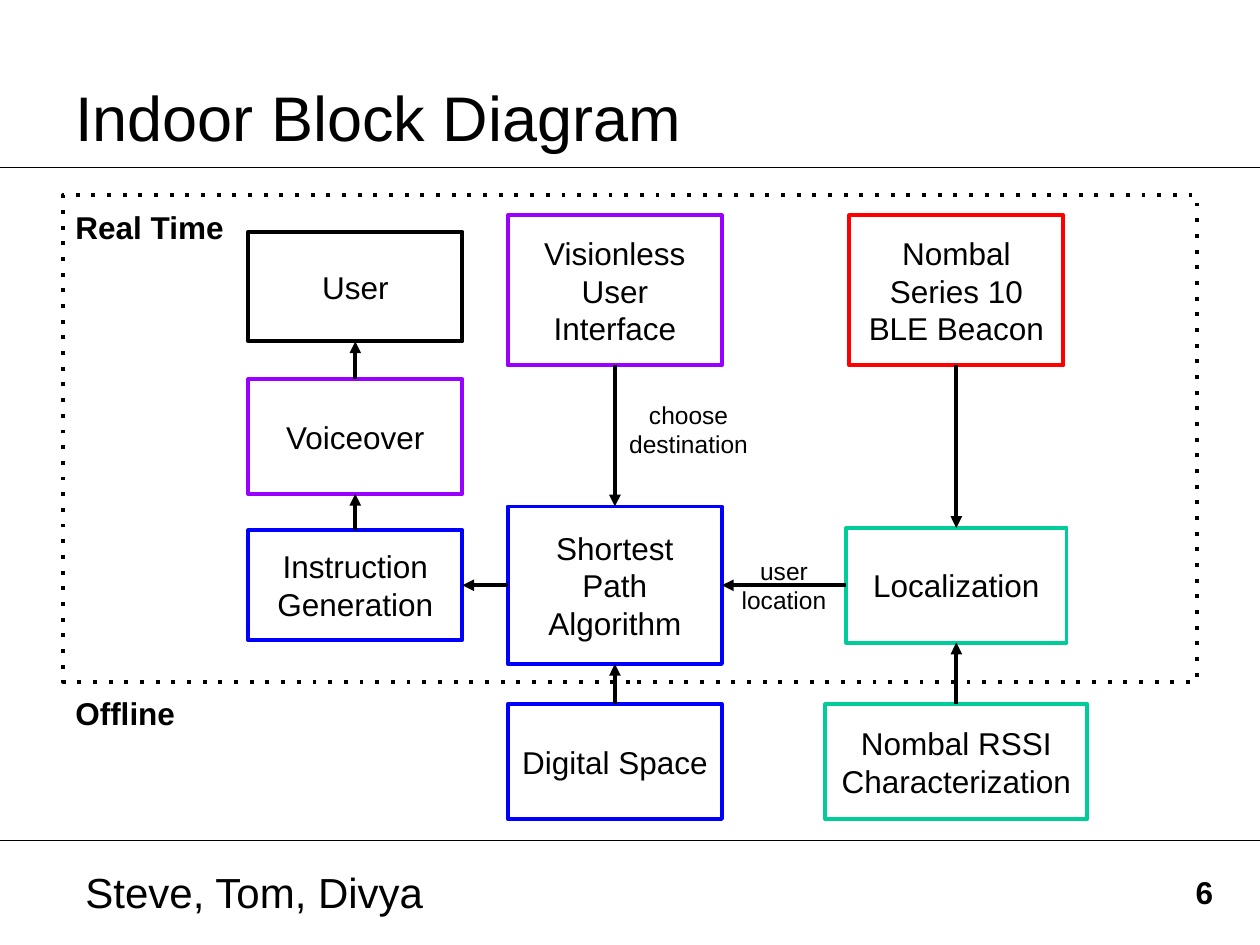
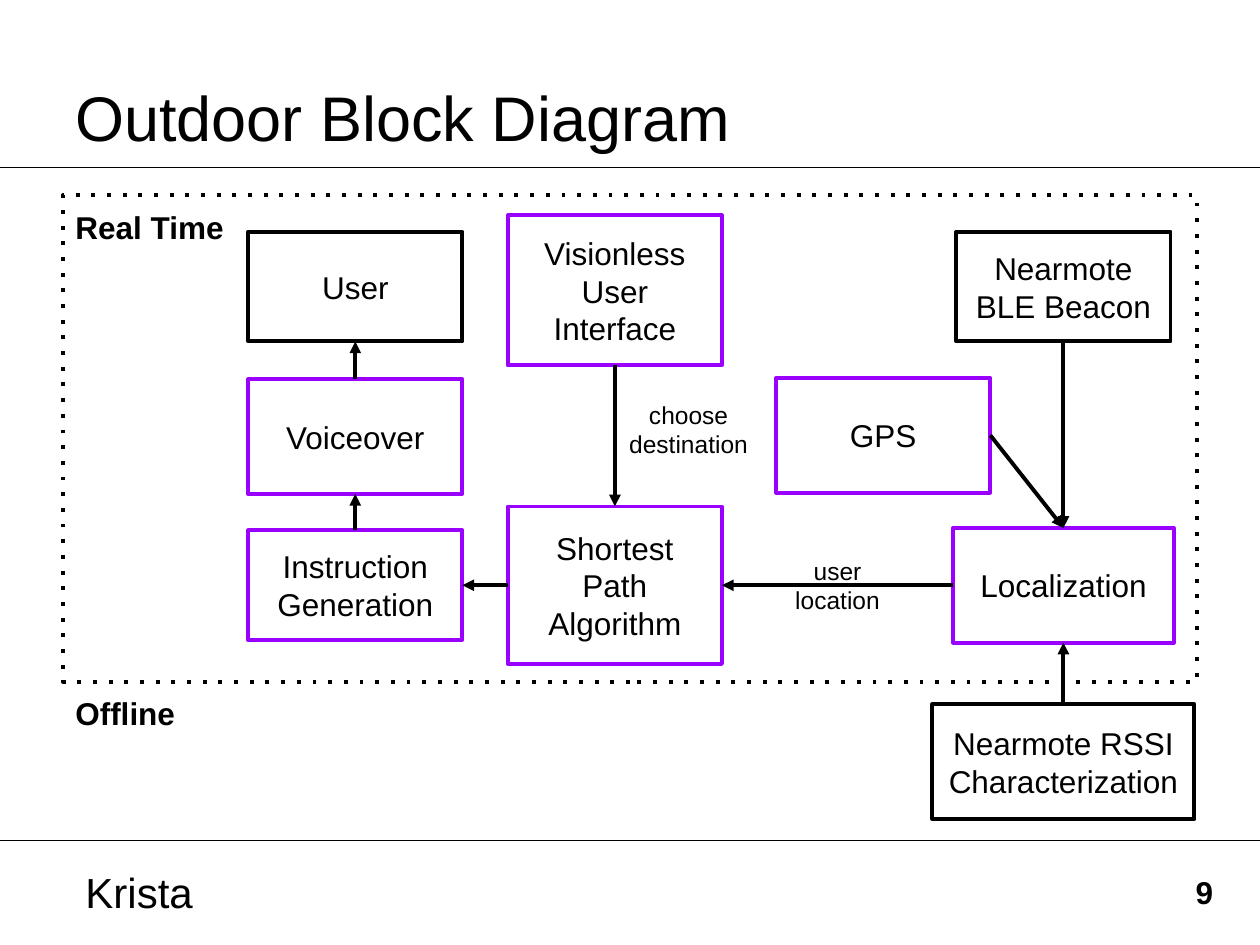
from dataclasses import dataclass

import pptx
import pptx.util
from lxml import etree
from pptx.dml.color import RGBColor
from pptx.enum.shapes import MSO_CONNECTOR, MSO_SHAPE
from pptx.enum.text import MSO_ANCHOR, PP_ALIGN
from pptx.oxml.ns import qn
from pptx.util import Inches

COLORS = {
    "black": "000000",
    "purple": "9900FF",
    "blue": "0000FF",
    "red": "FF0000",
    "green": "00CC99",
}
FONT = "Arial"
SLIDE_WIDTH, SLIDE_HEIGHT = 10, 7.5
BLOCK_WIDTH = 1.7
LEFT_COLUMN, MIDDLE_COLUMN = 2.82, 4.88
TOP, LEFT, BOTTOM, RIGHT = range(4)  # connection sites of a rectangle


@dataclass
class Block:
    text: str
    center: float
    top: float
    height: float
    color: str = "purple"
    width: float = BLOCK_WIDTH

    @property
    def left(self) -> float:
        return self.center - self.width / 2


@dataclass
class Arrow:
    start: str
    start_site: int
    end: str
    end_site: int


@dataclass
class Diagram:
    title: str
    presenters: str
    number: str
    right_column: float
    algorithm_color: str
    localization_color: str
    extra_blocks: dict[str, Block]
    extra_arrows: list[Arrow]


SHARED_ARROWS = [
    Arrow("voiceover", TOP, "user", BOTTOM),
    Arrow("instructions", TOP, "voiceover", BOTTOM),
    Arrow("algorithm", LEFT, "instructions", RIGHT),
    Arrow("interface", BOTTOM, "algorithm", TOP),
    Arrow("localization", LEFT, "algorithm", RIGHT),
    Arrow("beacon", BOTTOM, "localization", TOP),
    Arrow("signal", TOP, "localization", BOTTOM),
]


def rgb(color: str) -> RGBColor:
    return RGBColor.from_string(COLORS[color])


def write(shape, text: str, size: float, bold: bool = False,
          align=PP_ALIGN.LEFT, anchor=MSO_ANCHOR.TOP) -> None:
    frame = shape.text_frame
    frame.word_wrap = True
    frame.vertical_anchor = anchor
    frame.margin_left = frame.margin_right = Inches(0.1)
    frame.margin_top = frame.margin_bottom = Inches(0.1)
    frame.text = text
    for paragraph in frame.paragraphs:
        paragraph.alignment = align
        paragraph.font.name = FONT
        paragraph.font.size = pptx.util.Pt(size)
        paragraph.font.bold = bold
        paragraph.font.color.rgb = rgb("black")


def add_text(slide, text: str, left: float, top: float, width: float,
             height: float, size: float, **style) -> None:
    box = slide.shapes.add_textbox(
        Inches(left), Inches(top), Inches(width), Inches(height))
    write(box, text, size, **style)


def add_rectangle(slide, left: float, top: float, width: float,
                  height: float, color: str):
    shape = slide.shapes.add_shape(
        MSO_SHAPE.RECTANGLE,
        Inches(left), Inches(top), Inches(width), Inches(height))
    shape.shadow.inherit = False
    shape.fill.background()
    shape.line.color.rgb = rgb(color)
    shape.line.width = pptx.util.Pt(2.25)
    return shape


def add_line(slide, y: float = 0, width: float = 1):
    line = slide.shapes.add_connector(
        MSO_CONNECTOR.STRAIGHT, 0, Inches(y), Inches(SLIDE_WIDTH), Inches(y))
    line.line.color.rgb = rgb("black")
    line.line.width = pptx.util.Pt(width)
    etree.SubElement(line._element.spPr, qn("a:effectLst"))
    return line


def add_arrow(slide, arrow: Arrow, shapes: dict) -> None:
    line = add_line(slide, width=2.25)
    line.begin_connect(shapes[arrow.start], arrow.start_site)
    line.end_connect(shapes[arrow.end], arrow.end_site)
    etree.SubElement(line.line._get_or_add_ln(), qn("a:tailEnd"), type="triangle")


def add_frame(slide) -> None:
    frame = add_rectangle(slide, 0.5, 1.55, 9, 3.86, "black")
    etree.SubElement(frame.line._get_or_add_ln(), qn("a:prstDash"), val="dot")
    for text, top in (("Real Time", 1.55), ("Offline", 5.41)):
        add_text(slide, text, 0.5, top, 1.56, 0.38, 18, bold=True)


def add_slide_base(presentation, diagram: Diagram):
    slide = presentation.slides.add_slide(presentation.slide_layouts[6])
    for y in (1.33, 6.67):
        add_line(slide, y)
    add_text(slide, diagram.title, 0.5, 0.3, 9, 1.25, 36, anchor=MSO_ANCHOR.MIDDLE)
    add_text(slide, diagram.presenters, 0.58, 6.78, 2.99, 0.57, 24)
    add_text(slide, diagram.number, 9.39, 6.83, 0.48, 0.47, 18, bold=True)
    return slide


def add_diagram(presentation, diagram: Diagram) -> None:
    slide = add_slide_base(presentation, diagram)
    add_frame(slide)

    # Blocks
    algorithm_color = diagram.algorithm_color
    blocks = {
        "user": Block("User", LEFT_COLUMN, 1.84, 0.87, "black"),
        "voiceover": Block("Voiceover", LEFT_COLUMN, 3.01, 0.91),
        "instructions": Block("Instruction Generation", LEFT_COLUMN, 4.21, 0.87,
                              algorithm_color),
        "interface": Block("Visionless User Interface", MIDDLE_COLUMN, 1.71, 1.19),
        "algorithm": Block("Shortest Path Algorithm", MIDDLE_COLUMN, 4.02, 1.25,
                           algorithm_color),
        "localization": Block("Localization", diagram.right_column, 4.19, 0.91,
                              diagram.localization_color, 1.75),
        **diagram.extra_blocks,
    }
    shapes = {}
    for name, block in blocks.items():
        shapes[name] = add_rectangle(
            slide, block.left, block.top, block.width, block.height, block.color)
        write(shapes[name], block.text, 18,
              align=PP_ALIGN.CENTER, anchor=MSO_ANCHOR.MIDDLE)

    # Arrows
    for arrow in SHARED_ARROWS + diagram.extra_arrows:
        add_arrow(slide, arrow, shapes)

    # Arrow labels; the second is centred in the gap before Localization
    algorithm_right = MIDDLE_COLUMN + BLOCK_WIDTH / 2
    gap_center = (algorithm_right + blocks["localization"].left) / 2
    for text, left, top, width in (
        ("choose\ndestination", 4.87, 3.18, 1.19),
        ("user location", gap_center - 0.5, 4.42, 1),
    ):
        add_text(slide, text, left, top, width, 0.45, 14,
                 align=PP_ALIGN.CENTER, anchor=MSO_ANCHOR.MIDDLE)


INDOOR_RIGHT, OUTDOOR_RIGHT = 7.59, 8.44
DIAGRAMS = [
    Diagram(
        "Indoor Block Diagram", "Steve, Tom, Divya", "6",
        INDOOR_RIGHT, "blue", "green",
        {
            "beacon": Block("Nombal Series 10 BLE Beacon", INDOOR_RIGHT, 1.71, 1.19,
                            "red"),
            "signal": Block("Nombal RSSI Characterization", INDOOR_RIGHT, 5.59, 0.91,
                            "green", 2.08),
            "space": Block("Digital Space", MIDDLE_COLUMN, 5.59, 0.91, "blue"),
        },
        [Arrow("space", TOP, "algorithm", BOTTOM)],
    ),
    Diagram(
        "Outdoor Block Diagram", "Krista", "9",
        OUTDOOR_RIGHT, "purple", "purple",
        {
            "beacon": Block("Nearmote BLE Beacon", OUTDOOR_RIGHT, 1.84, 0.87, "black"),
            "signal": Block("Nearmote RSSI Characterization", OUTDOOR_RIGHT, 5.59, 0.91,
                            "black", 2.08),
            "gps": Block("GPS", 7.01, 3, 0.91),
        },
        [Arrow("gps", RIGHT, "localization", TOP)],
    ),
]


def main() -> None:
    presentation = pptx.Presentation()
    presentation.slide_width = Inches(SLIDE_WIDTH)
    presentation.slide_height = Inches(SLIDE_HEIGHT)
    for diagram in DIAGRAMS:
        add_diagram(presentation, diagram)
    presentation.save("out.pptx")


if __name__ == "__main__":
    main()
